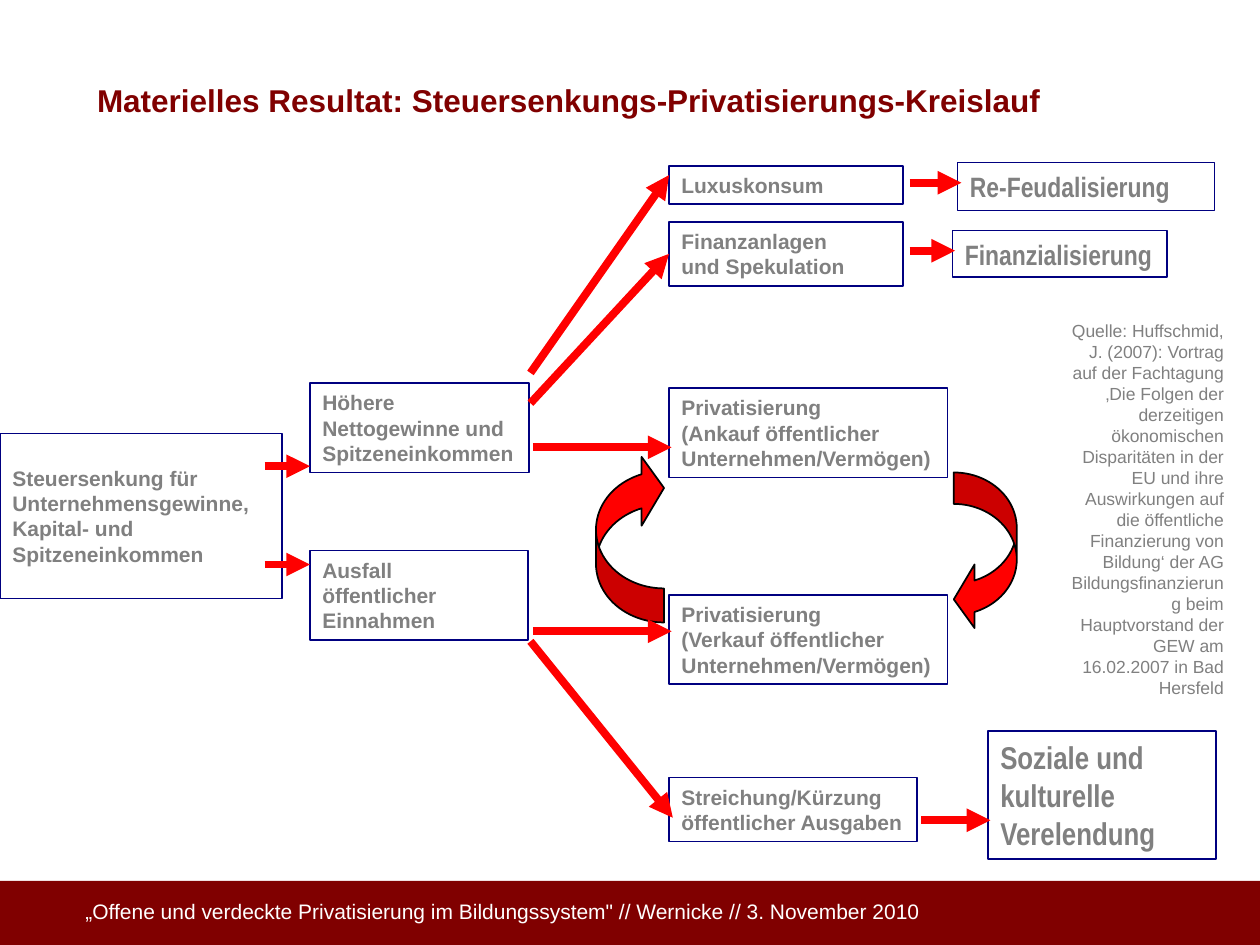
from lxml import etree
from pptx import Presentation
from pptx.dml.color import RGBColor
from pptx.enum.shapes import MSO_CONNECTOR, MSO_SHAPE
from pptx.enum.text import MSO_ANCHOR, PP_ALIGN
from pptx.oxml.ns import qn
from pptx.util import Inches, Pt

STRAIGHT = MSO_CONNECTOR.STRAIGHT
RECTANGLE = MSO_SHAPE.RECTANGLE
CURVED_ARROW = MSO_SHAPE.CURVED_LEFT_ARROW
TOP, MIDDLE = MSO_ANCHOR.TOP, MSO_ANCHOR.MIDDLE
LEFT, RIGHT = PP_ALIGN.LEFT, PP_ALIGN.RIGHT
LEFT_SIDE = 1
TITLE_ONLY = 5

COLORS = {
    "maroon": "800000",
    "navy": "000080",
    "gray": "808080",
    "red": "FF0000",
    "black": "000000",
    "white": "FFFFFF",
}

MIDDLE_COLUMN = 5.31
CAUSE_COLUMN = 2.46

# text, left, top, width, height
STEP_BOXES = [
    ("Steuersenkung für\nUnternehmensgewinne, Kapital- und Spitzeneinkommen", 0, 3.44, 2.24, 1.31),
    ("Höhere Nettogewinne und Spitzeneinkommen", CAUSE_COLUMN, 3.04, 1.74, 0.71),
    ("Ausfall\nöffentlicher Einnahmen", CAUSE_COLUMN, 4.37, 1.73, 0.71),
    ("Luxuskonsum", MIDDLE_COLUMN, 1.32, 1.86, 0.3),
    ("Privatisierung\n(Ankauf öffentlicher Unternehmen/Vermögen)", MIDDLE_COLUMN, 3.08, 2.21, 0.71),
    ("Privatisierung\v(Verkauf öffentlicher Unternehmen/Vermögen)", MIDDLE_COLUMN, 4.72, 2.21, 0.71),
    ("Streichung/Kürzung\nöffentlicher Ausgaben", MIDDLE_COLUMN, 6.17, 1.97, 0.51),
]

# text, left, top, width, height, text size
RESULT_BOXES = [
    ("Re-Feudalisierung", 7.6, 1.29, 2.04, 0.38, 16),
    ("Finanzialisierung", 7.56, 1.83, 1.7, 0.37, 16),
    ("Soziale und kulturelle Verelendung", 7.84, 5.8, 1.81, 1.02, 18),
]

# start x, start y, end x, end y
ARROWS = [
    (2.1, 3.7, 2.46, 3.7),
    (2.1, 4.48, 2.46, 4.48),
    (4.21, 2.96, 5.31, 1.39),
    (4.23, 3.55, 5.33, 3.55),
    (4.23, 5.01, 5.33, 5.01),
    (4.21, 5.09, 5.34, 6.49),
    (7.22, 1.45, 7.63, 1.45),
    (7.22, 1.99, 7.58, 1.99),
    (7.31, 6.51, 7.86, 6.51),
]

# left, top, width, height, rotation
CYCLE_ARROWS = [
    (7.57, 3.75, 0.5, 1.26, 0),
    (4.73, 3.6, 0.54, 1.34, 180),
]

SOURCE = (
    "Quelle: Huffschmid, J. (2007): Vortrag auf der Fachtagung ‚Die Folgen der "
    "derzeitigen ökonomischen Disparitäten in der EU und ihre Auswirkungen auf die "
    "öffentliche Finanzierung von Bildung‘ der AG Bildungsfinanzierung beim "
    "Hauptvorstand der GEW am 16.02.2007 in Bad Hersfeld"
)
FOOTER = "„Offene und verdeckte Privatisierung im Bildungssystem\" // Wernicke // 3. November 2010"


def rgb(name):
    return RGBColor.from_string(COLORS[name])


def write_text(shape, text, size, color="gray", bold=False, font="Arial", align=LEFT, anchor=TOP):
    frame = shape.text_frame
    frame.word_wrap = True
    frame.vertical_anchor = anchor
    frame.text = text
    for para in frame.paragraphs:
        para.alignment = align
        for span in para.runs:
            span.font.name = font
            span.font.size = Pt(size)
            span.font.bold = bold
            span.font.color.rgb = rgb(color)


def add_filled_shape(page, kind, left, top, width, height, fill, line=None):
    shape = page.shapes.add_shape(kind, Inches(left), Inches(top), Inches(width), Inches(height))
    shape.shadow.inherit = False
    shape.fill.solid()
    shape.fill.fore_color.rgb = rgb(fill)
    if line:
        shape.line.color.rgb = rgb(line)
        shape.line.width = Pt(1)
    else:
        shape.line.fill.background()
    return shape


def add_box(page, text, left, top, width, height, size=12, font="Arial"):
    box = add_filled_shape(page, RECTANGLE, left, top, width, height, "white", "navy")
    write_text(box, text, size, bold=True, font=font, anchor=MIDDLE)
    return box


def add_arrow(page, start_x, start_y, end_x, end_y):
    arrow = page.shapes.add_connector(
        STRAIGHT, Inches(start_x), Inches(start_y), Inches(end_x), Inches(end_y)
    )
    arrow.line.color.rgb = rgb("red")
    arrow.line.width = Pt(4.5)
    etree.SubElement(arrow.line._get_or_add_ln(), qn("a:tailEnd"), type="triangle")
    etree.SubElement(arrow._element.spPr, qn("a:effectLst"))
    return arrow


def add_cycle_arrow(page, left, top, width, height, rotation):
    arrow = add_filled_shape(page, CURVED_ARROW, left, top, width, height, "red", "black")
    arrow.rotation = rotation
    for index, value in enumerate((0.5, 1.01, 0.33)):
        arrow.adjustments[index] = value


def add_text(page, text, left, top, width, height, size, color, align=LEFT):
    box = page.shapes.add_textbox(Inches(left), Inches(top), Inches(width), Inches(height))
    write_text(box, text, size, color, align=align)


def set_title(page, text):
    title = page.shapes.title
    title.left, title.top = Inches(0.67), Inches(0.53)
    title.width, title.height = Inches(8.75), Inches(0.43)
    write_text(title, text, 18, "maroon", bold=True)
    title.text_frame.paragraphs[0].line_spacing = 1.2


def main():
    deck = Presentation()
    deck.slide_width, deck.slide_height = Inches(10), Inches(7.5)
    page = deck.slides.add_slide(deck.slide_layouts[TITLE_ONLY])

    add_filled_shape(page, RECTANGLE, 0, 6.99, 10, 0.51, "maroon")
    add_text(page, FOOTER, 0.58, 7.08, 9, 0.24, 12, "white")
    set_title(page, "Materielles Resultat: Steuersenkungs-Privatisierungs-Kreislauf")
    add_text(page, SOURCE, 8.39, 2.49, 1.42, 3.13, 10, "gray", RIGHT)

    for cycle_arrow in CYCLE_ARROWS:
        add_cycle_arrow(page, *cycle_arrow)
    for step in STEP_BOXES:
        add_box(page, *step)
    investments = add_box(
        page, "Finanzanlagen\vund Spekulation", MIDDLE_COLUMN, 1.76, 1.86, 0.51
    )
    for result in RESULT_BOXES:
        add_box(page, *result, font="Arial Narrow")

    for arrow in ARROWS:
        add_arrow(page, *arrow)
    investment_arrow = add_arrow(page, 4.21, 3.2, MIDDLE_COLUMN, 2.02)
    investment_arrow.end_connect(investments, LEFT_SIDE)

    deck.save("out.pptx")


if __name__ == "__main__":
    main()
